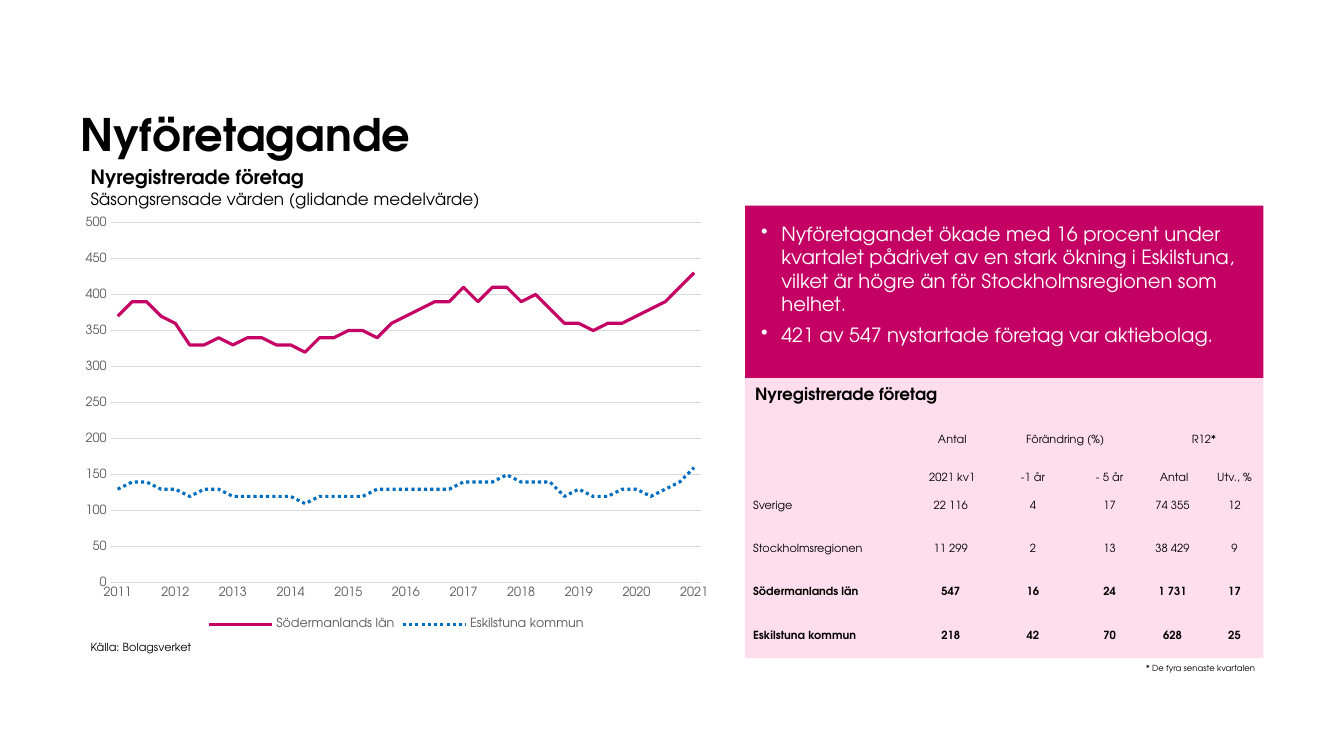
from dataclasses import dataclass

from lxml.etree import SubElement
from pptx import Presentation
from pptx.chart.data import CategoryChartData
from pptx.dml.color import RGBColor
from pptx.enum.chart import XL_CHART_TYPE, XL_LEGEND_POSITION, XL_MARKER_STYLE, XL_TICK_MARK
from pptx.enum.dml import MSO_LINE
from pptx.enum.shapes import MSO_SHAPE
from pptx.enum.text import MSO_ANCHOR, MSO_AUTO_SIZE, PP_ALIGN
from pptx.oxml import parse_xml
from pptx.oxml.ns import nsdecls, qn
from pptx.util import Pt

PX = 9144  # 100 px to the inch


@dataclass(frozen=True)
class Theme:
    font: str = "TeX Gyre Adventor"
    black: str = "000000"
    white: str = "FFFFFF"
    magenta: str = "C40064"
    pink: str = "FEDEED"
    blue: str = "006EBF"
    axis_text: str = "595959"
    grid: str = "D9D9D9"
    title: int = 32
    body: int = 14
    subtitle: int = 12
    axis: int = 9
    small: int = 8
    note: int = 6


def px(*lengths):
    return [length * PX for length in lengths]


def set_all(target, values):
    for name, value in values.items():
        setattr(target, name, value)


class SlideBuilder:
    def __init__(self, slide, theme):
        self.shapes = slide.shapes
        self.theme = theme

    def style(self, font, size, color=None, bold=False):
        set_all(font, {"name": self.theme.font, "size": Pt(size), "bold": bold})
        font.color.rgb = RGBColor.from_string(color or self.theme.black)

    def span(self, para, text, size, color=None, bold=False):
        span = para.add_run()
        span.text = text
        self.style(span.font, size, color, bold)

    def text(self, place, lines, **frame_values):
        """Add a text box; each line is (text, size, bold)."""
        frame = self.shapes.add_textbox(*px(*place)).text_frame
        set_all(frame, {"word_wrap": False, **frame_values})
        para = frame.paragraphs[0]
        for index, (text, size, bold) in enumerate(lines):
            if index:
                para.add_line_break()
            self.span(para, text, size, bold=bold)

    def panel(self, place, color):
        box = self.shapes.add_shape(MSO_SHAPE.RECTANGLE, *px(*place))
        box.shadow.inherit = False
        box.fill.solid()
        box.fill.fore_color.rgb = RGBColor.from_string(color)
        box.line.fill.background()
        return box

    def bullets(self, place, color, items):
        frame = self.panel(place, color).text_frame
        sides = ("left", "top", "right", "bottom")
        set_all(frame, {f"margin_{side}": 16 * PX for side in sides})
        set_all(frame, {"word_wrap": True, "vertical_anchor": MSO_ANCHOR.TOP})
        for index, item in enumerate(items):
            para = frame.add_paragraph() if index else frame.paragraphs[0]
            set_all(para, {"alignment": PP_ALIGN.LEFT, "space_before": Pt(5 if index else 0)})
            properties = para._p.get_or_add_pPr()
            properties.set("marL", str(20 * PX))
            properties.set("indent", str(-20 * PX))
            SubElement(properties, qn("a:buChar")).set("char", "•")
            self.span(para, item, self.theme.body, self.theme.white)

    def table(self, place, widths, heights, rows, header_rows, bold_from, merges):
        table = self.shapes.add_table(len(rows), len(widths), *px(*place)).table
        set_all(table, {"first_row": False, "horz_banding": False})
        for column, width in zip(table.columns, widths):
            column.width = width * PX
        for row, height in zip(table.rows, heights):
            row.height = height * PX
        for row, values in enumerate(rows):
            for column, value in enumerate(values):
                cell = table.cell(row, column)
                self.cell(cell, value, row < header_rows, column == 0, row >= bold_from)
        for row, first, last in merges:
            table.cell(row, first).merge(table.cell(row, last))

    def cell(self, cell, value, is_header, is_label, bold):
        set_all(cell, {
            "margin_left": (8 if is_label else 1) * PX,
            "margin_top": PX,
            "margin_right": PX,
            "margin_bottom": 0,
            "vertical_anchor": MSO_ANCHOR.BOTTOM if is_header else MSO_ANCHOR.MIDDLE,
        })
        para = cell.text_frame.paragraphs[0]
        para.alignment = PP_ALIGN.LEFT if is_label else PP_ALIGN.CENTER
        self.span(para, value, self.theme.small, bold=bold)
        properties = cell._tc.get_or_add_tcPr()
        for side in "LRTB":
            SubElement(SubElement(properties, qn(f"a:ln{side}")), qn("a:noFill"))
        cell.fill.background()

    def line_chart(self, place, categories, series, plot_area):
        """Draw lines; series holds (name, values, color, dash), plot_area holds fractions."""
        theme = self.theme
        data = CategoryChartData(number_format="General")
        data.categories = categories
        for name, values, _, _ in series:
            data.add_series(name, values)
        chart = self.shapes.add_chart(XL_CHART_TYPE.LINE, *px(*place), data).chart
        set_all(chart, {"has_title": False, "has_legend": True})
        self.style(chart.font, 10)
        set_all(chart.legend, {"position": XL_LEGEND_POSITION.BOTTOM, "include_in_layout": False})
        self.style(chart.legend.font, theme.axis, theme.axis_text)
        chart.plots[0].vary_by_categories = False

        years, counts = chart.category_axis, chart.value_axis
        for axis in (years, counts):
            set_all(axis, {"major_tick_mark": XL_TICK_MARK.NONE, "minor_tick_mark": XL_TICK_MARK.NONE})
            self.style(axis.tick_labels.font, theme.axis, theme.axis_text)
        set_all(counts, {"minimum_scale": 0, "maximum_scale": 500, "major_unit": 50,
                         "has_major_gridlines": True})
        counts.format.line.fill.background()
        for line in (years.format.line, counts.major_gridlines.format.line):
            self.line(line, theme.grid, 0.75)
        skip = parse_xml(f'<c:tickLblSkip {nsdecls("c")} val="4"/>')
        years._element.find(qn("c:noMultiLvlLbl")).addprevious(skip)

        for drawn, (_, _, color, dash) in zip(chart.plots[0].series, series):
            drawn.smooth = False
            drawn.marker.style = XL_MARKER_STYLE.NONE
            self.line(drawn.format.line, color, 2.25, dash)

        plot = chart._chartSpace.chart.plotArea
        for layout in plot.findall(qn("c:layout")):
            plot.remove(layout)
        sizes = "".join(f'<c:{key} val="{value}"/>' for key, value in zip("xywh", plot_area))
        plot.insert(0, parse_xml(
            f'<c:layout {nsdecls("c")}><c:manualLayout><c:layoutTarget val="inner"/>'
            f'<c:xMode val="edge"/><c:yMode val="edge"/>{sizes}</c:manualLayout></c:layout>'))

    def line(self, line, color, width, dash=None):
        line.color.rgb = RGBColor.from_string(color)
        set_all(line, {"width": Pt(width), "dash_style": dash})


COUNTY = [370, 390, 390, 370, 360, 330, 330, 340, 330, 340, 340, 330, 330, 320,
          340, 340, 350, 350, 340, 360, 370, 380, 390, 390, 410, 390, 410, 410,
          390, 400, 380, 360, 360, 350, 360, 360, 370, 380, 390, 410, 430]
MUNICIPALITY = [130, 140, 140, 130, 130, 120, 130, 130, 120, 120, 120, 120, 120, 110,
                120, 120, 120, 120, 130, 130, 130, 130, 130, 130, 140, 140, 140, 150,
                140, 140, 140, 120, 130, 120, 120, 130, 130, 120, 130, 140, 160]
QUARTERS = ["" if index % 4 else str(2011 + index // 4) for index in range(len(COUNTY))]
REGISTRATIONS = [
    ["", "Antal", "Förändring (%) ", "", "R12*", ""],
    ["", "2021 kv1", "-1 år", "- 5 år", "Antal", "Utv., %"],
    ["Sverige", "22 116 ", "4", "17", "74 355 ", "12"],
    ["Stockholmsregionen", "11 299 ", "2", "13", "38 429 ", "9"],
    ["Södermanlands län", "547 ", "16", "24", "1 731 ", "17"],
    ["Eskilstuna kommun", "218 ", "42", "70", "628 ", "25"],
]


def main():
    deck = Presentation()
    set_all(deck, {"slide_width": 1333 * PX, "slide_height": 750 * PX})
    theme = Theme()
    page = SlideBuilder(deck.slides.add_slide(deck.slide_layouts[6]), theme)
    fit = {"auto_size": MSO_AUTO_SIZE.SHAPE_TO_FIT_TEXT}

    page.text((80, 37, 922, 122), [("Nyföretagande", theme.title, True)],
              word_wrap=True, vertical_anchor=MSO_ANCHOR.BOTTOM,
              margin_left=0, margin_top=0, margin_right=0, margin_bottom=0)
    page.text((80, 630, 126, 24), [("Källa: Bolagsverket", theme.small, False)], **fit)
    page.panel((739, 375, 514, 278), theme.pink)
    page.bullets((739, 204, 514, 171), theme.magenta, [
        "Nyföretagandet ökade med 16 procent under kvartalet pådrivet av en stark ökning "
        "i Eskilstuna, vilket är högre än för Stockholmsregionen som helhet.",
        "421 av 547 nystartade företag var aktiebolag.",
    ])
    page.text((739, 376, 204, 30), [("Nyregistrerade företag", theme.subtitle, True)], **fit)
    page.text((1127, 653, 129, 20), [("* De fyra senaste kvartalen", theme.note, False)], **fit)
    page.text((80, 159, 413, 54), [
        ("Nyregistrerade företag", theme.body, True),
        ("Säsongsrensade värden (glidande medelvärde)", theme.subtitle, False),
    ], **fit)
    page.table((739, 406, 514, 248), [168, 75, 85, 67, 61, 59], [36, 38] + [43] * 4,
               REGISTRATIONS, header_rows=2, bold_from=4, merges=[(0, 2, 3), (0, 4, 5)])
    page.line_chart((71, 208, 644, 421), QUARTERS, [
        ("Södermanlands län", COUNTY, theme.magenta, None),
        ("Eskilstuna kommun", MUNICIPALITY, theme.blue, MSO_LINE.ROUND_DOT),
    ], plot_area=(0.06, 0.03, 0.91, 0.85))
    deck.save("out.pptx")


if __name__ == "__main__":
    main()
